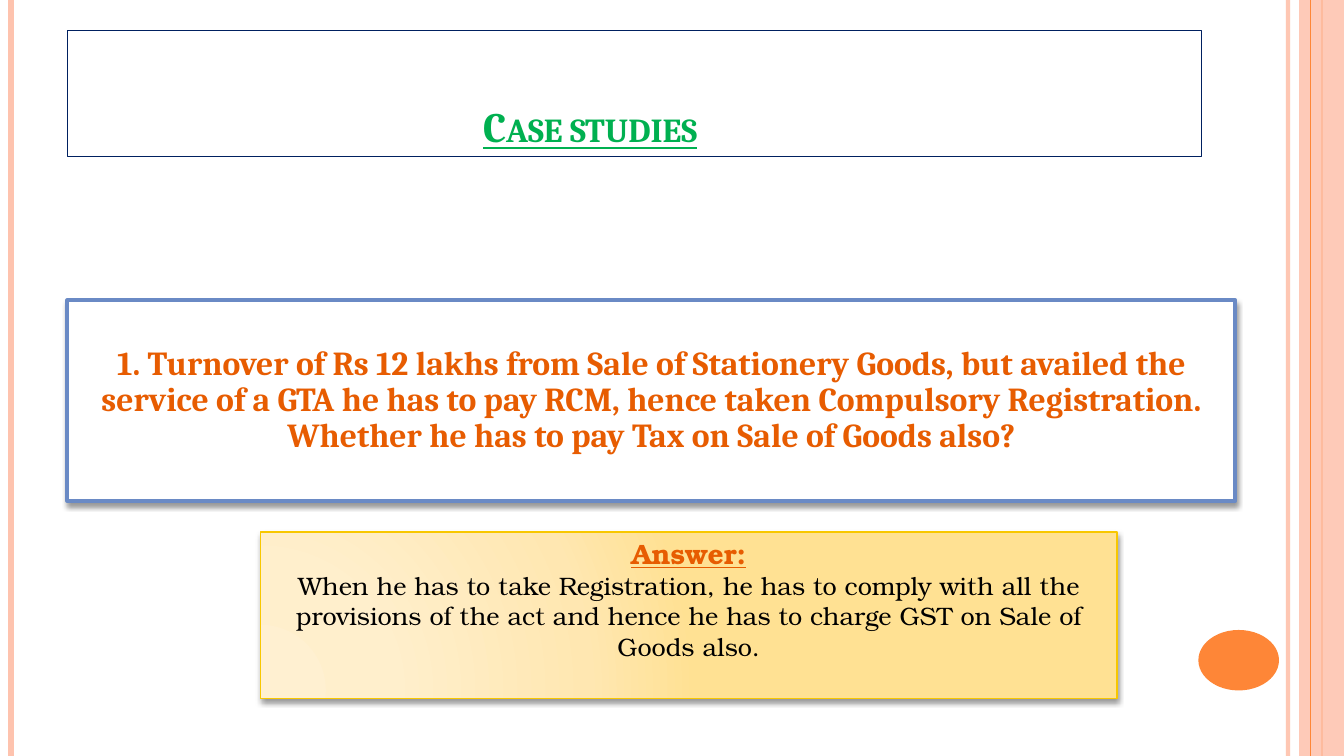
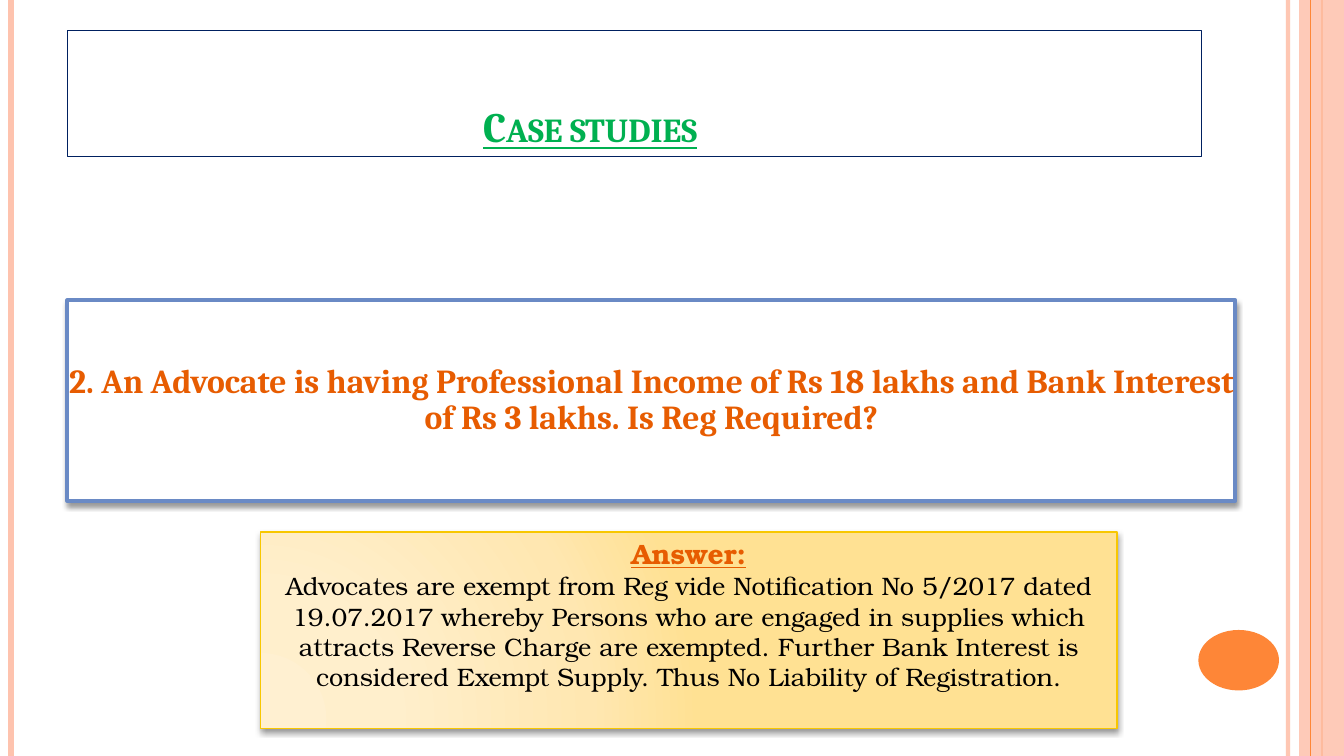
import dataclasses

import lxml.etree
import pptx
import pptx.dml.color
import pptx.enum.shapes
import pptx.enum.text
import pptx.oxml.ns
import pptx.util

Pt = pptx.util.Pt
qn = pptx.oxml.ns.qn
Shape = pptx.enum.shapes.MSO_SHAPE
Anchor = pptx.enum.text.MSO_ANCHOR


@dataclasses.dataclass(frozen=True)
class Theme:
    width: float = 960
    height: float = 540
    white: str = "FFFFFF"
    black: str = "000000"
    peach: str = "FEC3AE"
    orange: str = "FE8637"
    accent: str = "E75C01"
    green: str = "00B050"
    navy: str = "002060"
    blue: str = "6A8AC5"
    gold: str = "F8C700"
    gold_stops: tuple = ((0, "FFF0D1"), (30, "FFEFCC"), (75, "FFE7B1"), (100, "FFE193"))
    heading_font: str = "Cambria"
    answer_font: str = "TeX Gyre Bonum"
    title_size: float = 30
    question_size: float = 24
    label_size: float = 20
    answer_size: float = 18


def rgb(code):
    return pptx.dml.color.RGBColor.from_string(code)


def add_xml(parent, tag, **attributes):
    return lxml.etree.SubElement(
        parent, qn(tag), {key: str(value) for key, value in attributes.items()})


def set_opacity(element, percent):
    for color in element.iter(qn("a:srgbClr")):
        add_xml(color, "a:alpha", val=percent * 1000)


def write(paragraph, text, *, font, size, color, bold=False, underline=False,
          small_caps=False, line_spacing=None):
    paragraph.alignment = pptx.enum.text.PP_ALIGN.CENTER
    if line_spacing:
        paragraph.line_spacing = line_spacing
    run = paragraph.add_run()
    run.text = text
    run.font.name = font
    run.font.size = Pt(size)
    run.font.color.rgb = rgb(color)
    run.font.bold = bold
    run.font.underline = underline
    if small_caps:
        run.font._element.set("cap", "small")


class Deck:
    def __init__(self, theme):
        self.theme = theme
        self.presentation = pptx.Presentation()
        self.presentation.slide_width = Pt(theme.width)
        self.presentation.slide_height = Pt(theme.height)
        self.slide = None

    def start_slide(self):
        self.slide = self.presentation.slides.add_slide(self.presentation.slide_layouts[6])
        self.side_bands()

    def stripe(self, x, weight, color, opacity=100):
        """Draw a vertical line over the whole slide height."""
        line = self.slide.shapes.add_connector(
            pptx.enum.shapes.MSO_CONNECTOR.STRAIGHT, Pt(x), Pt(0), Pt(x), Pt(self.theme.height))
        line.line.color.rgb = rgb(color)
        line.line.width = Pt(weight)
        properties = line._element.spPr
        add_xml(properties, "a:effectLst")
        if opacity < 100:
            set_opacity(properties, opacity)

    def panel(self, left, top, width, height, *, kind=Shape.RECTANGLE, fill=None,
              line=None, weight=1, shadow=False):
        shape = self.slide.shapes.add_shape(kind, Pt(left), Pt(top), Pt(width), Pt(height))
        shape.shadow.inherit = False
        if fill:
            shape.fill.solid()
            shape.fill.fore_color.rgb = rgb(fill)
        else:
            shape.fill.background()
        if line:
            shape.line.color.rgb = rgb(line)
            shape.line.width = Pt(weight)
        else:
            shape.line.fill.background()
        if shadow:
            effects = shape._element.spPr.find(qn("a:effectLst"))
            outer = add_xml(effects, "a:outerShdw", blurRad=Pt(4), dist=Pt(2),
                            dir=90 * 60000, rotWithShape=0)
            add_xml(outer, "a:srgbClr", val=self.theme.black)
            set_opacity(outer, 40)
        shape.text_frame.word_wrap = True
        return shape

    def gold_gradient(self, shape):
        """Fill a shape with the circular gradient that starts at its lower left."""
        shape.fill.gradient()
        gradient = shape._element.spPr.find(qn("a:gradFill"))
        for child in list(gradient):
            gradient.remove(child)
        stops = add_xml(gradient, "a:gsLst")
        for position, color in self.theme.gold_stops:
            stop = add_xml(stops, "a:gs", pos=position * 1000)
            add_xml(stop, "a:srgbClr", val=color)
        circle = add_xml(gradient, "a:path", path="circle")
        add_xml(circle, "a:fillToRect", l=5000, t=100000, r=120000, b=10000)

    def side_bands(self):
        theme = self.theme
        self.stripe(920, 3, theme.peach, opacity=93)
        self.stripe(8, 4.5, theme.peach)
        self.stripe(944, 1.5, theme.orange)
        band = self.panel(928, 0, 32, theme.height, fill=theme.peach)
        set_opacity(band._element.spPr, 87)
        self.stripe(936, 0.75, theme.orange)
        self.panel(856, 450, 57.6, 43.2, kind=Shape.OVAL, fill=theme.orange)

    def title(self, text):
        theme = self.theme
        frame = self.panel(48, 21.6, 810, 90, line=theme.navy, weight=0.75).text_frame
        frame.vertical_anchor = Anchor.BOTTOM
        frame.margin_right = Pt(70)
        write(frame.paragraphs[0], text, font=theme.heading_font, size=theme.title_size,
              color=theme.green, bold=True, underline=True, small_caps=True)

    def question(self, text):
        theme = self.theme
        frame = self.panel(48, 214.5, 834.5, 143.3, fill=theme.white, line=theme.blue,
                           weight=2.75, shadow=True).text_frame
        frame.vertical_anchor = Anchor.MIDDLE
        frame.margin_left = frame.margin_right = Pt(1)
        write(frame.paragraphs[0], text, font=theme.heading_font, size=theme.question_size,
              color=theme.accent, bold=True, line_spacing=0.9)

    def answer(self, text, height):
        theme = self.theme
        box = self.panel(186, 380, 612, height, line=theme.gold, shadow=True)
        self.gold_gradient(box)
        frame = box.text_frame
        frame.vertical_anchor = Anchor.TOP
        write(frame.paragraphs[0], "Answer:", font=theme.answer_font, size=theme.label_size,
              color=theme.accent, bold=True, underline=True)
        write(frame.add_paragraph(), text, font=theme.answer_font, size=theme.answer_size,
              color=theme.black)


CASES = (
    ("1. Turnover of Rs 12 lakhs from Sale of Stationery Goods, but availed the service of "
     "a GTA he has to pay RCM, hence taken Compulsory Registration. Whether he has to pay "
     "Tax on Sale of Goods also?",
     "When he has to take Registration, he has to comply with all the provisions of the act "
     "and hence he has to charge GST on Sale of Goods also.",
     119),
    ("2. An Advocate is having Professional Income of Rs 18 lakhs and Bank Interest of "
     "Rs 3 lakhs. Is Reg Required?",
     "Advocates are exempt from Reg vide Notification No 5/2017 dated 19.07.2017 whereby "
     "Persons who are engaged in supplies which attracts Reverse Charge are exempted. "
     "Further Bank Interest is considered Exempt Supply. Thus No Liability of Registration.",
     140.5),
)


def main():
    deck = Deck(Theme())
    for question, answer, answer_height in CASES:
        deck.start_slide()
        deck.title("Case studies")
        deck.question(question)
        deck.answer(answer, answer_height)
    deck.presentation.save("out.pptx")


if __name__ == "__main__":
    main()
